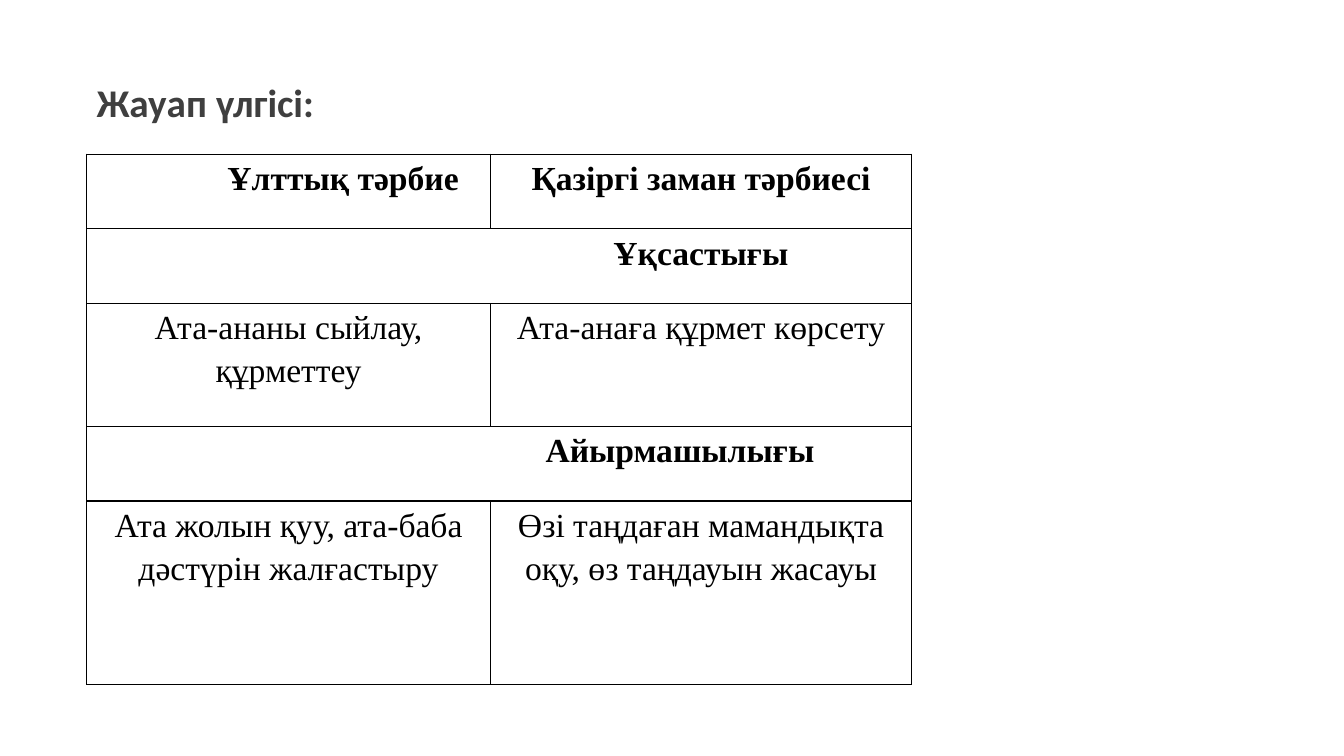
from lxml import etree
from pptx import Presentation
from pptx.dml.color import RGBColor
from pptx.enum.text import MSO_ANCHOR, MSO_AUTO_SIZE, PP_ALIGN
from pptx.oxml.ns import qn
from pptx.util import Inches, Pt

LEFT, CENTER = PP_ALIGN.LEFT, PP_ALIGN.CENTER
MIDDLE, TOP = MSO_ANCHOR.MIDDLE, MSO_ANCHOR.TOP
GROW = MSO_AUTO_SIZE.SHAPE_TO_FIT_TEXT
WIDTH, HEIGHT = Inches(13.33), Inches(7.5)
COLORS = {"title": "3F3F3F", "text": "000000", "line": "000000"}
EDGE = 6.45
COL = 30.04
PAD = 0.53

# Each row: height, bold, left shift of the first cell, cell texts
ROWS = [
    (9.87, True, 8.12, ["Ұлттық тәрбие", "Қазіргі заман тәрбиесі"]),
    (9.87, True, 30, ["Ұқсастығы"]),
    (16.27, False, 0, ["Ата-ананы сыйлау, құрметтеу",
                       "Ата-анаға құрмет көрсету"]),
    (9.87, True, 26.88, ["Айырмашылығы"]),
    (24.27, False, 0, ["Ата жолын қуу, ата-баба дәстүрін жалғастыру",
                       "Өзі таңдаған мамандықта оқу, өз таңдауын жасауы"]),
]


def wide(share):
    """Percent of the slide's width."""
    return round(WIDTH * share / 100)


def high(share):
    """Percent of the slide's height."""
    return round(HEIGHT * share / 100)


def add_run(para, text, size, face, color, bold):
    run = para.add_run()
    run.text = text
    font = run.font
    font.size, font.name, font.bold = Pt(size), face, bold
    font.color.rgb = RGBColor.from_string(COLORS[color])


def add_title(slide, text):
    title = slide.shapes.title
    title.left, title.top = wide(EDGE), high(9.73)
    title.width, title.height = wide(54.09), high(7.6)
    frame = title.text_frame
    frame.word_wrap = True
    frame.auto_size = GROW
    frame.vertical_anchor = MIDDLE
    para = frame.paragraphs[0]
    para.alignment = LEFT
    add_run(para, text, 28, "Calibri", "title", True)


def add_border(cell):
    props = cell._tc.get_or_add_tcPr()
    for side in ("lnL", "lnR", "lnT", "lnB"):
        line = etree.SubElement(props, qn("a:" + side), w=str(Pt(1)))
        fill = etree.SubElement(line, qn("a:solidFill"))
        etree.SubElement(fill, qn("a:srgbClr"), val=COLORS["line"])


def fill_cell(cell, text, bold, shift):
    cell.margin_left, cell.margin_right = wide(PAD + shift), wide(PAD)
    cell.margin_top, cell.margin_bottom = Inches(0.01), 0
    cell.vertical_anchor = TOP
    para = cell.text_frame.paragraphs[0]
    para.alignment = CENTER
    para.line_spacing = 1.15
    add_run(para, text, 24, "Times New Roman", "text", bold)


def add_grid(slide):
    total = sum(row[0] for row in ROWS)
    table = slide.shapes.add_table(
        len(ROWS), 2, wide(EDGE), high(20.4), wide(2 * COL), high(total)).table
    table.first_row = table.horz_banding = False
    for col in table.columns:
        col.width = wide(COL)
    for cell in table.iter_cells():
        add_border(cell)
        cell.fill.background()
    for r, (height, bold, shift, texts) in enumerate(ROWS):
        table.rows[r].height = high(height)
        if len(texts) == 1:
            table.cell(r, 0).merge(table.cell(r, 1))
        for c, text in enumerate(texts):
            fill_cell(table.cell(r, c), text, bold, 0 if c else shift)


def main():
    deck = Presentation()
    deck.slide_width, deck.slide_height = WIDTH, HEIGHT
    slide = deck.slides.add_slide(deck.slide_layouts[5])
    add_title(slide, "Жауап үлгісі:")
    add_grid(slide)
    deck.save("out.pptx")


if __name__ == "__main__":
    main()
